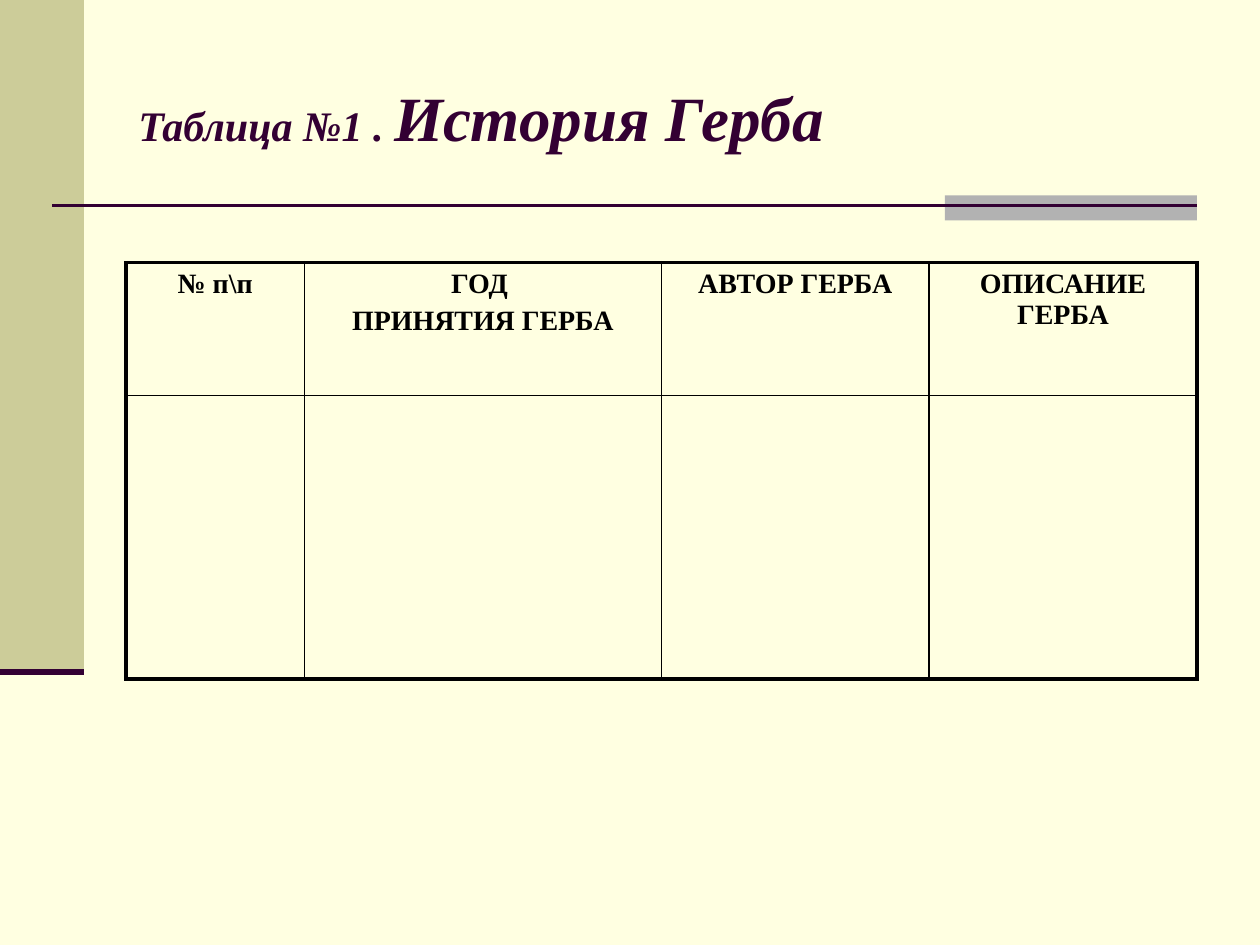
"""Build a slide with a blank table on the history of the coat of arms."""
from lxml.etree import SubElement
from pptx import Presentation
from pptx.dml.color import RGBColor as RGB
from pptx.enum.shapes import MSO_CONNECTOR as Connector, MSO_SHAPE as Shape
from pptx.enum.text import MSO_ANCHOR as Anchor, PP_ALIGN as Align
from pptx.oxml.ns import qn
from pptx.util import Pt

TITLE = [("Таблица №1 . ", "title_label"), ("История Герба", "title")]
HEADERS = [["№ п\\п"], ["ГОД ", "ПРИНЯТИЯ ГЕРБА"], ["АВТОР ГЕРБА"], ["ОПИСАНИЕ ГЕРБА"]]
COLUMN_WIDTHS = [102, 204, 153, 153]
ROW_HEIGHTS = [76, 162]
TABLE_LEFT, TABLE_TOP = 72, 150
BANDS = [((0, 0, 48, 384), "side"), ((540, 111.6, 144, 14.4), "accent")]
RULES = [((30, 117.4, 684, 117.4), 1.5), ((0, 384, 48, 384), 3.5)]
THEME = {
    "font": "Times New Roman",
    "colors": {"paper": "FFFFE1", "side": "CCCC99", "accent": "B2B2B2",
               "plum": "330033", "ink": "000000"},
    "sizes": {"title_label": 24, "title": 36, "header": 16},
    "borders": {"outer": 2.25, "inner": 1},
}


def color(name):
    """Return a theme colour."""
    return RGB.from_string(THEME["colors"][name])


def write(paragraph, text, size, ink, italic=False, align=Align.LEFT, before=0):
    """Add one formatted run to a paragraph."""
    paragraph.alignment = align
    paragraph.space_before = Pt(before)
    run = paragraph.add_run()
    run.text = text
    font = run.font
    font.name, font.size = THEME["font"], Pt(THEME["sizes"][size])
    font.bold, font.italic = True, italic
    font.color.rgb = color(ink)


def add_band(slide, box, fill):
    """Add a plain filled rectangle."""
    band = slide.shapes.add_shape(Shape.RECTANGLE, *map(Pt, box))
    band.shadow.inherit = False
    band.fill.solid()
    band.fill.fore_color.rgb = color(fill)
    band.line.fill.background()


def add_rule(slide, ends, width):
    """Add a straight line without a shadow."""
    rule = slide.shapes.add_connector(Connector.STRAIGHT, *map(Pt, ends))
    rule.line.color.rgb = color("plum")
    rule.line.width = Pt(width)
    SubElement(rule._element.spPr, qn("a:effectLst"))


def add_title(slide):
    """Add the two-size heading."""
    heading = slide.shapes.add_textbox(Pt(72), Pt(21.6), Pt(612), Pt(90)).text_frame
    heading.word_wrap = True
    heading.vertical_anchor = Anchor.MIDDLE
    for text, size in TITLE:
        write(heading.paragraphs[0], text, size, "plum", italic=True)


def set_borders(cell, outer_sides):
    """Draw all four cell borders, heavier on the outer sides."""
    properties = cell._tc.get_or_add_tcPr()
    for side, is_outer in outer_sides.items():
        width = THEME["borders"]["outer" if is_outer else "inner"]
        border = SubElement(properties, qn(f"a:ln{side}"), w=str(Pt(width)))
        fill = SubElement(border, qn("a:solidFill"))
        SubElement(fill, qn("a:srgbClr"), val=THEME["colors"]["ink"])


def add_history_table(slide):
    """Add the table with its header row and empty answer row."""
    last_row, last_column = len(ROW_HEIGHTS) - 1, len(COLUMN_WIDTHS) - 1
    table = slide.shapes.add_table(
        len(ROW_HEIGHTS), len(COLUMN_WIDTHS), Pt(TABLE_LEFT), Pt(TABLE_TOP),
        Pt(sum(COLUMN_WIDTHS)), Pt(sum(ROW_HEIGHTS))).table
    table.horz_banding = False
    for column, width in zip(table.columns, COLUMN_WIDTHS):
        column.width = Pt(width)
    for r, height in enumerate(ROW_HEIGHTS):
        table.rows[r].height = Pt(height)
        for c in range(len(COLUMN_WIDTHS)):
            cell = table.cell(r, c)
            set_borders(cell, {"L": c == 0, "R": c == last_column,
                               "T": r == 0, "B": r == last_row})
            cell.fill.background()
    for c, lines in enumerate(HEADERS):
        frame = table.cell(0, c).text_frame
        for i, line in enumerate(lines):
            paragraph = frame.add_paragraph() if i else frame.paragraphs[0]
            write(paragraph, line, "header", "ink", align=Align.CENTER, before=3.2)


def main():
    """Build and save the slide."""
    deck = Presentation()
    deck.slide_width, deck.slide_height = Pt(720), Pt(540)
    slide = deck.slides.add_slide(deck.slide_layouts[6])
    slide.background.fill.solid()
    slide.background.fill.fore_color.rgb = color("paper")
    for box, fill in BANDS:
        add_band(slide, box, fill)
    for ends, width in RULES:
        add_rule(slide, ends, width)
    add_title(slide)
    add_history_table(slide)
    deck.save("out.pptx")


if __name__ == "__main__":
    main()
